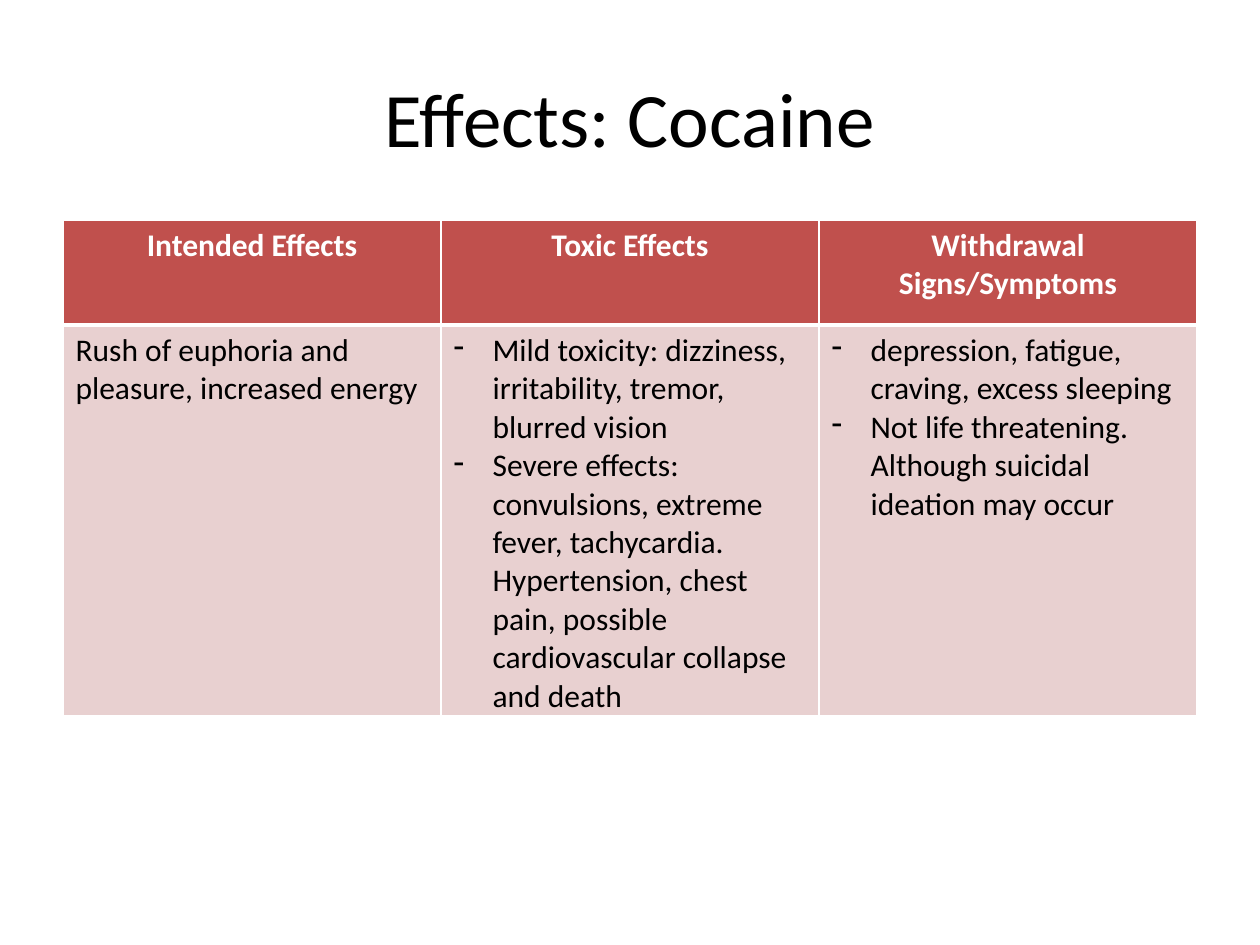
from lxml import etree
from pptx import Presentation
from pptx.dml.color import RGBColor
from pptx.enum.text import MSO_ANCHOR, PP_ALIGN
from pptx.oxml.ns import qn
from pptx.util import Emu, Pt

CENTER, LEFT = PP_ALIGN.CENTER, PP_ALIGN.LEFT
MIDDLE = MSO_ANCHOR.MIDDLE
FONT = "Calibri"
BLACK, WHITE, RED, PINK = "000000", "FFFFFF", "C0504D", "E8D0D0"
BULLET_INDENT = 39

HEADERS = ["Intended Effects", "Toxic Effects", "Withdrawal Signs/Symptoms"]
EFFECTS = [
    ["Rush of euphoria and pleasure, increased energy"],
    ["Mild toxicity: dizziness, irritability, tremor, blurred vision",
     "Severe effects: convulsions, extreme fever, tachycardia. Hypertension, "
     "chest pain, possible cardiovascular collapse and death"],
    ["depression, fatigue, craving, excess sleeping",
     "Not life threatening. Although suicidal ideation may occur"],
]


def px(length):
    """Convert pixels, 126 to the inch, to EMU."""
    return Emu(round(length * 914400 / 126))


def color(hex_string):
    return RGBColor.from_string(hex_string)


def style_paragraph(paragraph, size, hex_color, align, bold=False):
    paragraph.alignment = align
    font = paragraph.font
    font.name, font.size, font.bold = FONT, Pt(size), bold
    font.color.rgb = color(hex_color)


def add_dash(paragraph):
    """Give the paragraph a hanging dash as its bullet."""
    properties = paragraph._p.get_or_add_pPr()
    properties.set("marL", str(px(BULLET_INDENT)))
    properties.set("indent", str(-px(BULLET_INDENT)))
    etree.SubElement(properties, qn("a:buChar"), char="-")


def add_borders(cell, top, bottom):
    """Draw white borders; the side borders are 1 pt wide."""
    properties = cell._tc.get_or_add_tcPr()
    for side, width in (("L", 1), ("R", 1), ("T", top), ("B", bottom)):
        line = etree.SubElement(properties, qn(f"a:ln{side}"), w=str(Pt(width)))
        fill = etree.SubElement(line, qn("a:solidFill"))
        etree.SubElement(fill, qn("a:srgbClr"), val=WHITE)


def fill_cell(cell, lines, fill, text_color, align, bold, borders):
    add_borders(cell, *borders)
    cell.fill.solid()
    cell.fill.fore_color.rgb = color(fill)
    cell.text = "\n".join(lines)
    for paragraph in cell.text_frame.paragraphs:
        if len(lines) > 1:
            add_dash(paragraph)
        style_paragraph(paragraph, 18, text_color, align, bold)


def add_title(slide, left, top, width, height):
    frame = slide.shapes.add_textbox(px(left), px(top), px(width), px(height)).text_frame
    frame.word_wrap = True
    frame.vertical_anchor = MIDDLE
    frame.text = "Effects: Cocaine"
    style_paragraph(frame.paragraphs[0], 44, BLACK, CENTER)


def add_effects_table(slide, left, top, width, row_heights):
    table = slide.shapes.add_table(
        len(row_heights), len(HEADERS),
        px(left), px(top), px(width), px(sum(row_heights))).table
    for row, height in zip(table.rows, row_heights):
        row.height = px(height)
    for column, (header, effects) in enumerate(zip(HEADERS, EFFECTS)):
        fill_cell(table.cell(0, column), [header], RED, WHITE, CENTER, True, (1, 3))
        fill_cell(table.cell(1, column), effects, PINK, BLACK, LEFT, False, (3, 1))


def main():
    presentation = Presentation()
    presentation.slide_width, presentation.slide_height = px(1260), px(945)
    slide = presentation.slides.add_slide(presentation.slide_layouts[6])
    add_title(slide, 63, 38, 1134, 158)
    add_effects_table(slide, 63, 220, 1134, [105, 390])
    presentation.save("out.pptx")


if __name__ == "__main__":
    main()
